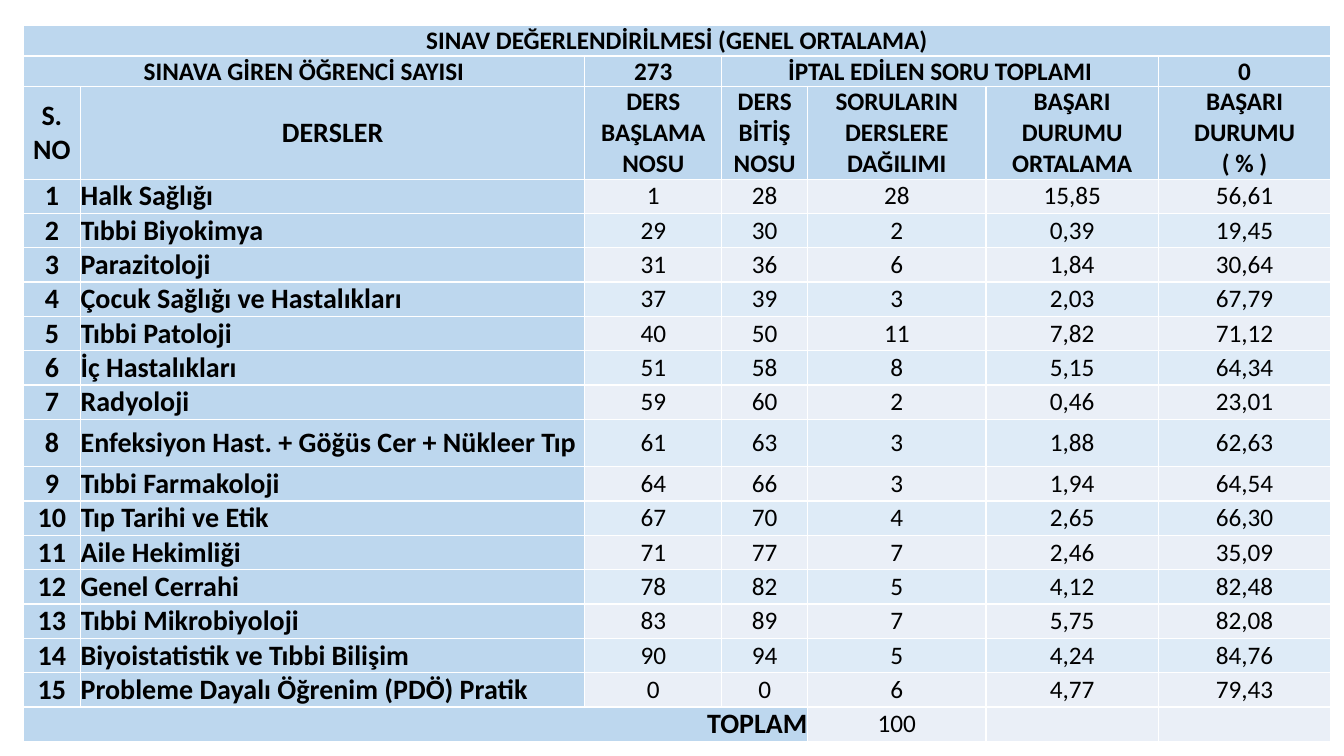
from lxml.etree import SubElement
from pptx import Presentation
from pptx.dml.color import RGBColor
from pptx.enum.text import MSO_ANCHOR, PP_ALIGN
from pptx.oxml.ns import qn
from pptx.util import Inches, Pt

theme = {
    "font": "Calibri", "ink": "000000", "line": "FFFFFF",
    "head": "BDD7EE", "odd": "EAEFF7", "even": "DEEBF7",
    "large": Pt(20), "small": Pt(18), "edge": Pt(1),
}


def assign(item, values):
    for name, value in values.items():
        setattr(item, name, value)


def border(cell):
    props = cell._tc.get_or_add_tcPr()
    for side in ("lnL", "lnR", "lnT", "lnB"):
        line = SubElement(props, qn(f"a:{side}"), w=str(theme["edge"]))
        fill = SubElement(line, qn("a:solidFill"))
        SubElement(fill, qn("a:srgbClr"), val=theme["line"])


lessons = [
    ("Halk Sağlığı", "1", "28", "28", "15,85", "56,61"),
    ("Tıbbi Biyokimya", "29", "30", "2", "0,39", "19,45"),
    ("Parazitoloji", "31", "36", "6", "1,84", "30,64"),
    ("Çocuk Sağlığı ve Hastalıkları", "37", "39", "3", "2,03", "67,79"),
    ("Tıbbi Patoloji", "40", "50", "11", "7,82", "71,12"),
    ("İç Hastalıkları", "51", "58", "8", "5,15", "64,34"),
    ("Radyoloji", "59", "60", "2", "0,46", "23,01"),
    ("Enfeksiyon Hast. + Göğüs Cer + Nükleer Tıp", "61", "63", "3", "1,88", "62,63"),
    ("Tıbbi Farmakoloji", "64", "66", "3", "1,94", "64,54"),
    ("Tıp Tarihi ve Etik", "67", "70", "4", "2,65", "66,30"),
    ("Aile Hekimliği", "71", "77", "7", "2,46", "35,09"),
    ("Genel Cerrahi", "78", "82", "5", "4,12", "82,48"),
    ("Tıbbi Mikrobiyoloji", "83", "89", "7", "5,75", "82,08"),
    ("Biyoistatistik ve Tıbbi Bilişim", "90", "94", "5", "4,24", "84,76"),
    ("Probleme Dayalı Öğrenim (PDÖ) Pratik", "0", "0", "6", "4,77", "79,43"),
]
rows = [
    ("SINAV DEĞERLENDİRİLMESİ (GENEL ORTALAMA)", "", "", "", "", "", ""),
    ("SINAVA GİREN ÖĞRENCİ SAYISI", "", "273", "İPTAL EDİLEN SORU TOPLAMI", "", "", "0"),
    ("S.\vNO", "DERSLER", "DERS\vBAŞLAMA\vNOSU", "DERS\vBİTİŞ\vNOSU",
     "SORULARIN\vDERSLERE\vDAĞILIMI", "BAŞARI\vDURUMU\vORTALAMA", "BAŞARI\vDURUMU\v( % )"),
    *[(str(i), *lesson) for i, lesson in enumerate(lessons, 1)],
    ("TOPLAM", "", "", "", "100", "", ""),
]
widths = [0.57, 5, 1.36, 0.85, 1.77, 1.71, 1.71]
heights = [0.29, 0.29, 0.87] + [0.32] * 16
heights[10] = 0.47
merges = [(0, 0, 6), (1, 0, 1), (1, 3, 5), (18, 0, 3)]
total = len(rows) - 1

deck = Presentation()
assign(deck, {"slide_width": Inches(13.33), "slide_height": Inches(7.5)})
slide = deck.slides.add_slide(deck.slide_layouts[6])
table = slide.shapes.add_table(
    len(rows), len(widths), Inches(0.23), Inches(0.25), Inches(12.96), Inches(7.05)
).table
assign(table, {"first_row": False, "horz_banding": False})
for column, width in zip(table.columns, widths):
    column.width = Inches(width)
for row, height in zip(table.rows, heights):
    row.height = Inches(height)

for r, row in enumerate(rows):
    for c, text in enumerate(row):
        cell = table.cell(r, c)
        head = r < 3 or c < 2 or (r == total and c < 4)
        band = "odd" if r % 2 or r == total else "even"
        border(cell)
        cell.fill.solid()
        cell.fill.fore_color.rgb = RGBColor.from_string(theme["head" if head else band])
        assign(cell, {
            "margin_left": 0, "margin_right": 0, "margin_top": 0, "margin_bottom": 0,
            "vertical_anchor": MSO_ANCHOR.MIDDLE, "text": text,
        })
        para = cell.text_frame.paragraphs[0]
        para.alignment = PP_ALIGN.CENTER
        if r == total and c == 0:
            para.alignment = PP_ALIGN.RIGHT
        elif r > 2 and c == 1:
            para.alignment = PP_ALIGN.LEFT
        size = theme["large" if r > 1 and c < 2 else "small"]
        for run in para.runs:
            assign(run.font, {"name": theme["font"], "size": size, "bold": head})
            run.font.color.rgb = RGBColor.from_string(theme["ink"])

for r, first, last in merges:
    table.cell(r, first).merge(table.cell(r, last))

deck.save("out.pptx")
